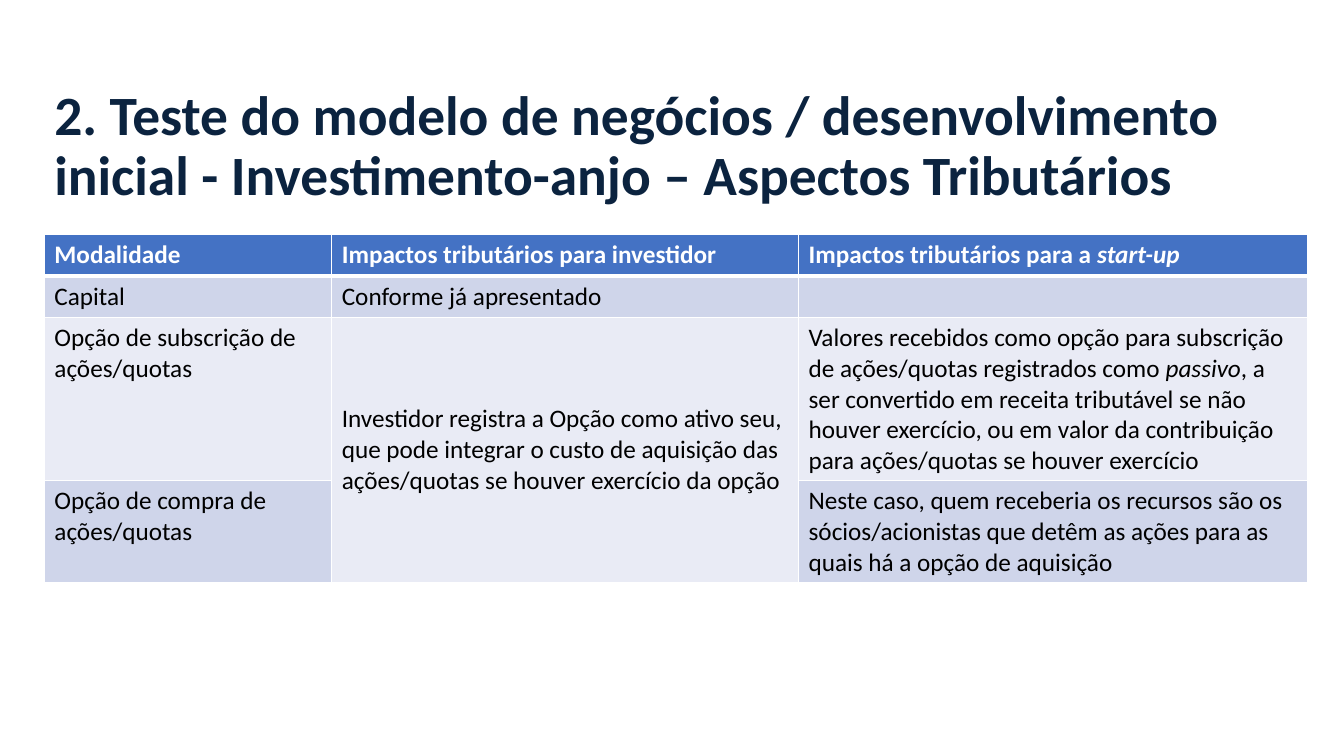
from lxml.etree import SubElement
from pptx import Presentation
from pptx.dml.color import RGBColor
from pptx.enum.text import MSO_ANCHOR as Anchor
from pptx.oxml.ns import qn
from pptx.util import Inches, Pt

NAVY = RGBColor(0x0B, 0x23, 0x3F)
BLUE = RGBColor(0x44, 0x72, 0xC4)
MIST = RGBColor(0xCF, 0xD5, 0xEA)
PALE = RGBColor(0xE9, 0xEB, 0xF5)
WHITE = RGBColor(0xFF, 0xFF, 0xFF)
BLACK = RGBColor(0x00, 0x00, 0x00)

TITLE = ("2. Teste do modelo de negócios / desenvolvimento inicial - "
         "Investimento-anjo – Aspectos Tributários")
TITLE_FORMAT = {"name": "Calibri", "size": Pt(39.6), "bold": True}
HEADER_FORMAT = {"name": "Calibri", "size": Pt(18), "bold": True}
BODY_FORMAT = {"name": "Calibri", "size": Pt(18), "bold": False}

COLUMN_WIDTHS = (2.85, 4.63, 5.05)
ROW_HEIGHTS = (0.41, 0.41, 1.62, 1.01)
ROW_FILLS = (BLUE, MIST, PALE, MIST)
ROWS = (
    ("Modalidade", "Impactos tributários para investidor",
     "Impactos tributários para a *start-up*"),
    ("Capital", "Conforme já apresentado", ""),
    ("Opção de subscrição de ações/quotas",
     "Investidor registra a Opção como ativo seu, que pode integrar o custo "
     "de aquisição das ações/quotas se houver exercício da opção",
     "Valores recebidos como opção para subscrição de ações/quotas "
     "registrados como *passivo*, a ser convertido em receita tributável se "
     "não houver exercício, ou em valor da contribuição para ações/quotas "
     "se houver exercício"),
    ("Opção de compra de ações/quotas", "",
     "Neste caso, quem receberia os recursos são os sócios/acionistas que "
     "detêm as ações para as quais há a opção de aquisição"),
)


def write_text(paragraph, text, color, font_format):
    """Write text as runs, setting the parts between asterisks in italics."""
    for attribute, value in font_format.items():
        setattr(paragraph.font, attribute, value)
    for index, part in enumerate(text.split("*")):
        if part:
            run = paragraph.add_run()
            run.text = part
            for attribute, value in font_format.items():
                setattr(run.font, attribute, value)
            run.font.italic = index % 2 == 1
            run.font.color.rgb = color


def add_title(slide):
    """Add the slide heading."""
    shape = slide.shapes.add_textbox(
        Inches(0.44), Inches(0.93), Inches(12.53), Inches(1.07))
    frame = shape.text_frame
    frame.word_wrap = True
    frame.vertical_anchor = Anchor.MIDDLE
    paragraph = frame.paragraphs[0]
    paragraph.line_spacing = 0.9
    write_text(paragraph, TITLE, NAVY, TITLE_FORMAT)


def set_borders(cell, top, bottom):
    """Draw white cell borders with the given top and bottom widths."""
    properties = cell._tc.get_or_add_tcPr()
    for side, width in (("L", 1), ("R", 1), ("T", top), ("B", bottom)):
        line = SubElement(properties, qn(f"a:ln{side}"), w=str(Pt(width)))
        fill = SubElement(line, qn("a:solidFill"))
        SubElement(fill, qn("a:srgbClr"), val=str(WHITE))


def add_tax_table(slide):
    """Add the table of tax effects by type of investment."""
    table = slide.shapes.add_table(
        len(ROWS), len(COLUMN_WIDTHS), Inches(0.44), Inches(2.33),
        Inches(sum(COLUMN_WIDTHS)), Inches(sum(ROW_HEIGHTS))).table
    for column, width in zip(table.columns, COLUMN_WIDTHS):
        column.width = Inches(width)
    for row, height in zip(table.rows, ROW_HEIGHTS):
        row.height = Inches(height)
    for row_index, (texts, fill) in enumerate(zip(ROWS, ROW_FILLS)):
        is_header = row_index == 0
        color = WHITE if is_header else BLACK
        font_format = HEADER_FORMAT if is_header else BODY_FORMAT
        for column_index, text in enumerate(texts):
            cell = table.cell(row_index, column_index)
            set_borders(cell, 3 if row_index == 1 else 1, 3 if is_header else 1)
            cell.fill.solid()
            cell.fill.fore_color.rgb = fill
            write_text(cell.text_frame.paragraphs[0], text, color, font_format)
    investor_cell = table.cell(2, 1)
    investor_cell.merge(table.cell(3, 1))
    investor_cell.vertical_anchor = Anchor.MIDDLE


def main():
    """Build the slide and save it."""
    presentation = Presentation()
    presentation.slide_width = Inches(13.33)
    presentation.slide_height = Inches(7.5)
    slide = presentation.slides.add_slide(presentation.slide_layouts[6])
    add_title(slide)
    add_tax_table(slide)
    presentation.save("out.pptx")


if __name__ == "__main__":
    main()
